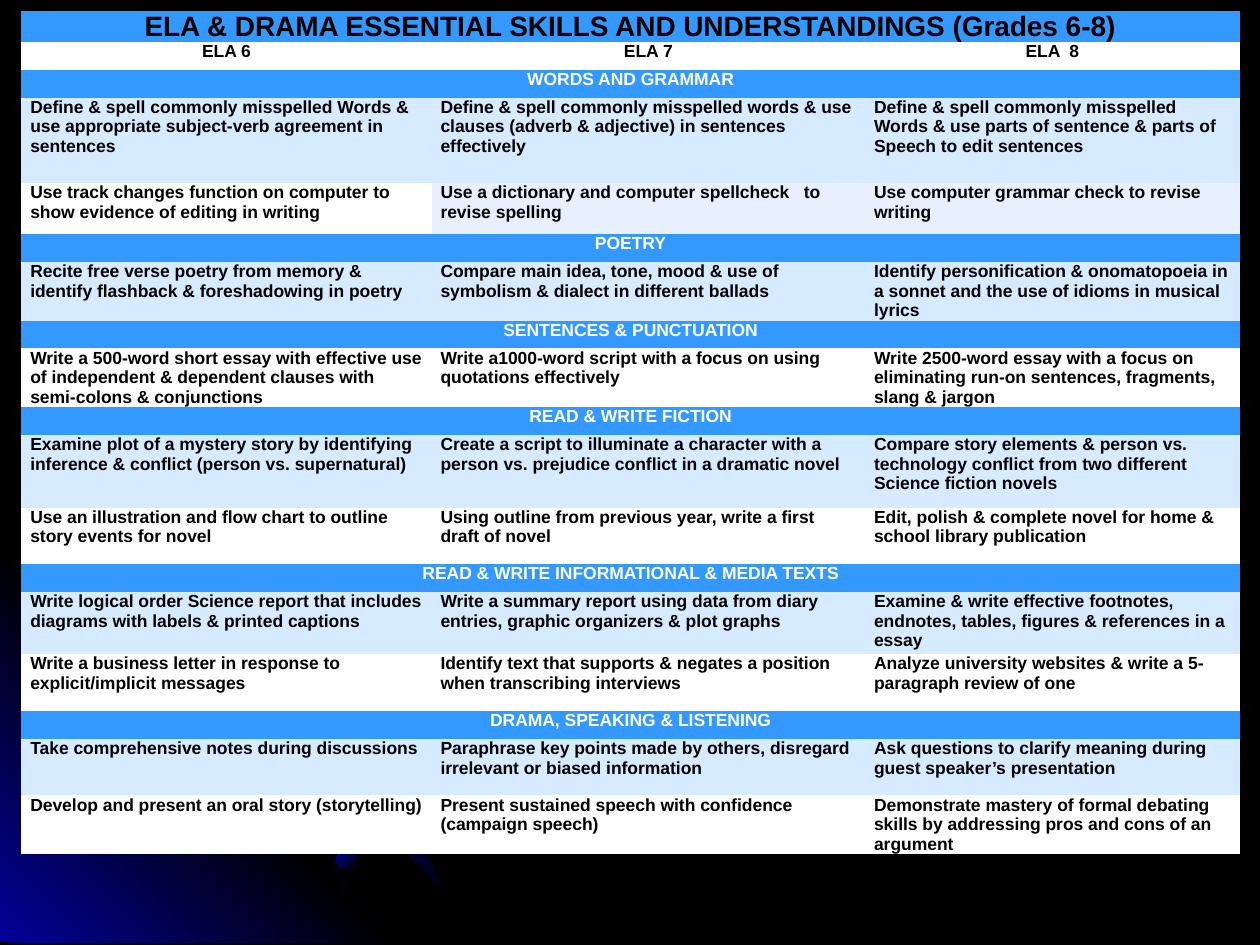
from dataclasses import dataclass

from lxml import etree
from pptx import Presentation
from pptx.dml.color import RGBColor
from pptx.enum.shapes import MSO_SHAPE
from pptx.enum.text import PP_ALIGN
from pptx.oxml.ns import qn
from pptx.util import Cm, Pt

CENTER, LEFT = PP_ALIGN.CENTER, PP_ALIGN.LEFT
OVAL = MSO_SHAPE.OVAL
FONT = "Arial"
BLACK, WHITE, NAVY = "000000", "FFFFFF", "010199"
BLUE, PALE, LILAC = "3399FF", "D6EBFF", "E8EFFF"
NO_STYLE_NO_GRID = "{2D5ABB26-0587-4C30-8999-92F81FD0307C}"
SLIDE_H = 19.05
COLUMN_WIDTHS = (8.27, 8.74, 7.55)


@dataclass
class Row:
    """One text makes a band across all columns; three texts make a row of cells."""
    texts: tuple[str, ...]
    height: float = 0.56
    fills: tuple[str, ...] = (WHITE,) * 3
    color: str = BLACK
    size: int = 10
    align: PP_ALIGN = LEFT


def band(text: str, color: str = WHITE, size: int = 10) -> Row:
    return Row((text,), fills=(BLUE,), color=color, size=size, align=CENTER)


def skills(height: float, *texts: str, fill: str = WHITE) -> Row:
    return Row(texts, height, (fill,) * 3)


ROWS = [
    band("ELA & DRAMA ESSENTIAL SKILLS AND UNDERSTANDINGS (Grades 6-8)", BLACK, 16),
    Row(("ELA 6", "ELA 7", "ELA  8"), align=CENTER),
    band("WORDS AND GRAMMAR"),
    skills(1.72,
           "Define & spell commonly misspelled Words & use appropriate subject-verb agreement in sentences",
           "Define & spell commonly misspelled words & use clauses (adverb & adjective) in sentences effectively",
           "Define & spell commonly misspelled Words & use parts of sentence & parts of Speech to edit sentences",
           fill=PALE),
    Row(("Use track changes function on computer to show evidence of editing in writing",
         "Use a dictionary and computer spellcheck   to revise spelling",
         "Use computer grammar check to revise writing"),
        1.03, (WHITE, LILAC, LILAC)),
    band("POETRY"),
    skills(1.15,
           "Recite free verse poetry from memory & identify flashback & foreshadowing in poetry",
           "Compare main idea, tone, mood & use of symbolism & dialect in different ballads",
           "Identify personification & onomatopoeia in a sonnet and the use of idioms in musical lyrics",
           fill=PALE),
    band("SENTENCES & PUNCTUATION"),
    skills(1.1,
           "Write a 500-word short essay with effective use of independent & dependent clauses with "
           "semi-colons & conjunctions",
           "Write a1000-word script with a focus on using quotations effectively",
           "Write 2500-word essay with a focus on eliminating run-on sentences, fragments, slang & jargon"),
    band("READ & WRITE FICTION"),
    skills(1.47,
           "Examine plot of a mystery story by identifying inference & conflict (person vs. supernatural)",
           "Create a script to illuminate a character with a person vs. prejudice conflict in a dramatic novel",
           "Compare story elements & person vs. technology conflict from two different Science fiction novels",
           fill=PALE),
    skills(1.14,
           "Use an illustration and flow chart to outline story events for novel",
           "Using outline from previous year, write a first draft of novel",
           "Edit, polish & complete novel for home & school library publication"),
    band("READ & WRITE INFORMATIONAL & MEDIA TEXTS"),
    skills(1.25,
           "Write logical order Science report that includes diagrams with labels & printed captions",
           "Write a summary report using data from diary entries, graphic organizers & plot graphs",
           "Examine & write effective footnotes, endnotes, tables, figures & references in a essay",
           fill=PALE),
    skills(1.15,
           "Write a business letter in response to explicit/implicit messages",
           "Identify text that supports & negates a position when transcribing interviews",
           "Analyze university websites & write a 5-paragraph review of one"),
    band("DRAMA, SPEAKING & LISTENING"),
    skills(1.14,
           "Take comprehensive notes during discussions",
           "Paraphrase key points made by others, disregard irrelevant or biased information",
           "Ask questions to clarify meaning during guest speaker’s presentation",
           fill=PALE),
    skills(1.15,
           "Develop and present an oral story (storytelling)",
           "Present sustained speech with confidence (campaign speech)",
           "Demonstrate mastery of formal debating skills by addressing pros and cons of an argument"),
]

GLOW = [(0, 10.85), (8.18, 19.03), (0, 19.03)]
OUTER_ARC = [(0, 11.05), (1.45, 11.35), (2.49, 11.66), (3.45, 12.12), (4.42, 12.62),
             (5.31, 13.23), (6.15, 13.92), (6.91, 14.68), (7.62, 15.52), (8.26, 16.46),
             (8.94, 17.73), (9.45, 19.02)]
LOWER_ARC = [(0, 12.07), (1.04, 12.4), (2.01, 12.83), (2.97, 13.34), (3.86, 13.94),
             (4.67, 14.63), (5.46, 15.39), (6.15, 16.26), (6.76, 17.17), (7.26, 18.08),
             (7.7, 19.02)]
MIDDLE_ARC = [(0, 11.23), (1.93, 12.01), (3.66, 13.11), (5.18, 14.55), (6.45, 16.23),
              (7.16, 17.6), (7.7, 19.02)]


def rgb(color: str) -> RGBColor:
    return RGBColor.from_string(color)


def fill_gradient(sp, colors: tuple[str, ...], angle: int) -> None:
    """Fill with evenly spaced colours; the angle runs clockwise in degrees."""
    sp.shadow.inherit = False
    sp.line.fill.background()
    sp.fill.gradient()
    grad = sp.fill._xPr.find(qn("a:gradFill"))
    stops = grad.find(qn("a:gsLst"))
    for stop in list(stops):
        stops.remove(stop)
    for i, color in enumerate(colors):
        position = i * 100000 // (len(colors) - 1)
        stop = etree.SubElement(stops, qn("a:gs"), pos=str(position))
        etree.SubElement(stop, qn("a:srgbClr"), val=color)
    grad.find(qn("a:lin")).set("ang", str(angle * 60000))


def add_outline(s, points: list[tuple[float, float]], colors: tuple[str, ...], angle: int) -> None:
    builder = s.shapes.build_freeform(*points[0], scale=Cm(1))
    builder.add_line_segments(points[1:], close=True)
    fill_gradient(builder.convert_to_shape(), colors, angle)


def add_arc(s, edge: list[tuple[float, float]], width: float = 0.05) -> None:
    inner = [(max(x - width, 0), min(y + width, SLIDE_H)) for x, y in reversed(edge)]
    add_outline(s, edge + inner, (BLACK, NAVY, BLACK), 45)


def add_text(cell, text: str, *, color: str, size: int, align: PP_ALIGN) -> None:
    p = cell.text_frame.paragraphs[0]
    p.alignment = align
    r = p.add_run()
    r.text = text
    r.font.name, r.font.size, r.font.bold = FONT, Pt(size), True
    r.font.color.rgb = rgb(color)


def add_skills_table(s, rows: list[Row]) -> None:
    frame = s.shapes.add_table(len(rows), len(COLUMN_WIDTHS), Cm(0.43), Cm(0.22),
                               Cm(sum(COLUMN_WIDTHS)), Cm(sum(row.height for row in rows)))
    table = frame.table
    table.first_row = table.horz_banding = False
    table._tbl.tblPr.find(qn("a:tableStyleId")).text = NO_STYLE_NO_GRID
    for column, width in zip(table.columns, COLUMN_WIDTHS):
        column.width = Cm(width)
    for i, row in enumerate(rows):
        table.rows[i].height = Cm(row.height)
        if len(row.texts) == 1:
            table.cell(i, 0).merge(table.cell(i, len(COLUMN_WIDTHS) - 1))
        for j, (text, fill) in enumerate(zip(row.texts, row.fills)):
            cell = table.cell(i, j)
            cell.margin_left = cell.margin_right = Cm(0.18)
            cell.margin_top = cell.margin_bottom = 0
            cell.fill.solid()
            cell.fill.fore_color.rgb = rgb(fill)
            add_text(cell, text, color=row.color, size=row.size, align=row.align)


def main() -> None:
    prs = Presentation()
    prs.slide_width, prs.slide_height = Cm(25.4), Cm(SLIDE_H)
    s = prs.slides.add_slide(prs.slide_layouts[6])
    s.background.fill.solid()
    s.background.fill.fore_color.rgb = rgb(BLACK)

    add_arc(s, OUTER_ARC)
    add_outline(s, GLOW, (NAVY, BLACK, NAVY), 315)
    add_arc(s, LOWER_ARC)
    add_arc(s, MIDDLE_ARC)
    ball = s.shapes.add_shape(OVAL, Cm(6.78), Cm(17.12), Cm(0.41), Cm(0.41))
    fill_gradient(ball, (NAVY, BLACK), 45)

    add_skills_table(s, ROWS)
    prs.save("out.pptx")


if __name__ == "__main__":
    main()
